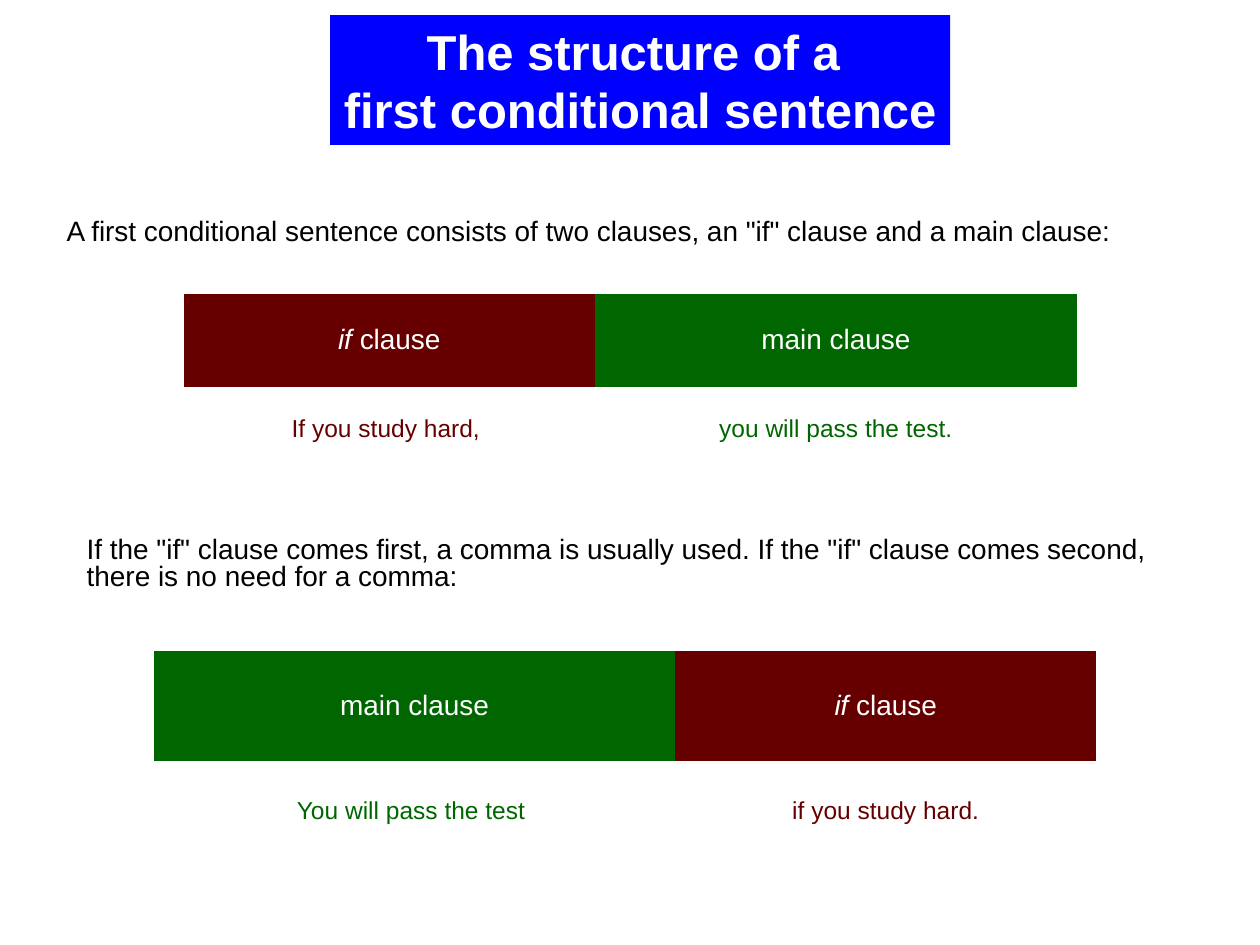
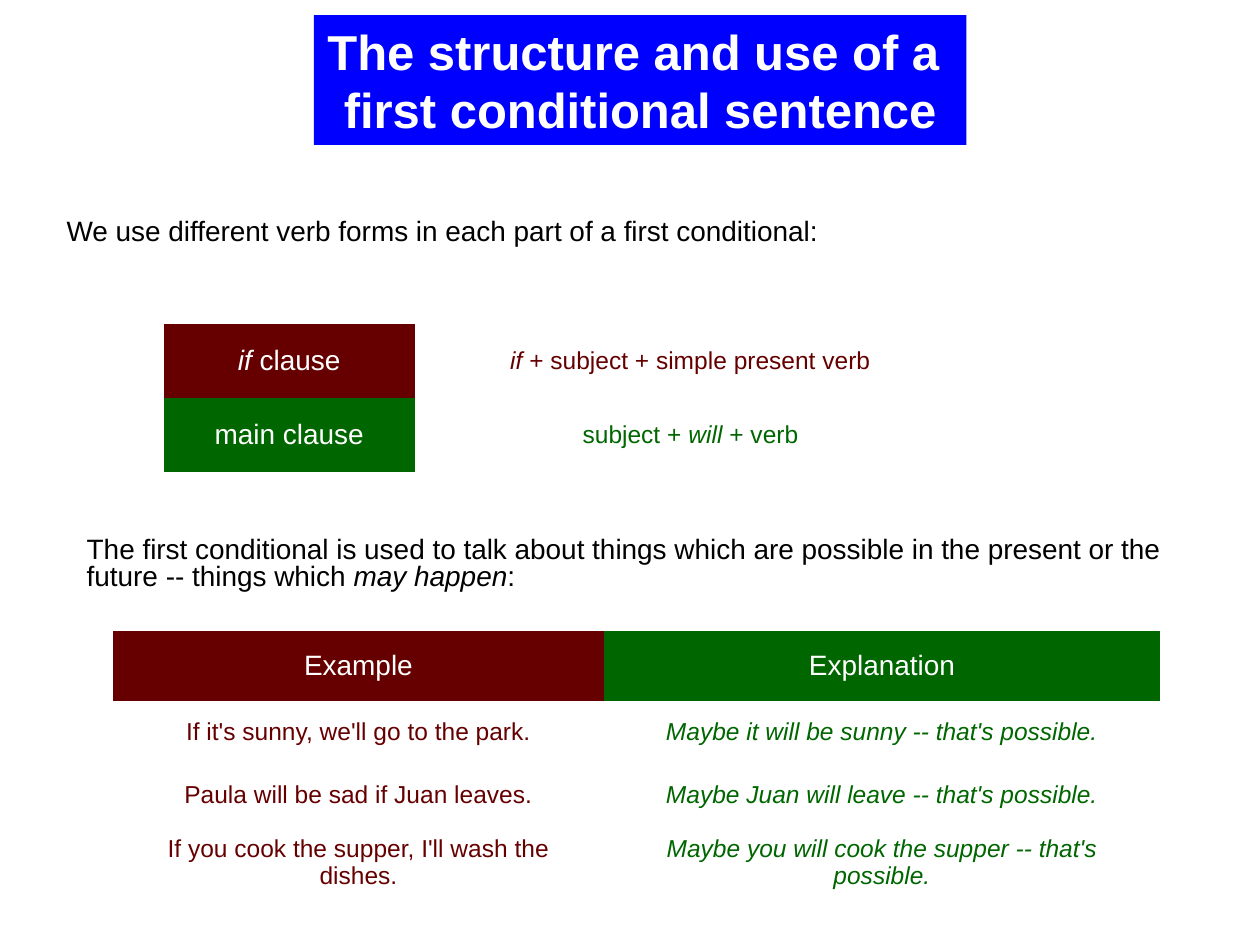
from dataclasses import dataclass

from pptx import Presentation
from pptx.dml.color import RGBColor
from pptx.enum.shapes import MSO_SHAPE
from pptx.enum.text import MSO_ANCHOR, PP_ALIGN
from pptx.util import Inches, Pt

RECTANGLE = MSO_SHAPE.RECTANGLE
MIDDLE = MSO_ANCHOR.MIDDLE
LEFT = PP_ALIGN.LEFT
CENTER = PP_ALIGN.CENTER
BLANK_LAYOUT = 6
NO_GRID_STYLE = "{2D5ABB26-0587-4C30-8999-92F81FD0307C}"


@dataclass(frozen=True)
class Theme:
    font: str = "Arial"
    blue: RGBColor = RGBColor(0x00, 0x00, 0xFF)
    maroon: RGBColor = RGBColor(0x66, 0x00, 0x00)
    green: RGBColor = RGBColor(0x00, 0x66, 0x00)
    white: RGBColor = RGBColor(0xFF, 0xFF, 0xFF)
    black: RGBColor = RGBColor(0x00, 0x00, 0x00)
    title_size: int = 28
    text_size: int = 16
    example_size: int = 14


THEME = Theme()


def write(tf, text, size, color, bold=False, align=LEFT, spacing=None, before=None):
    """Write text into a frame; *stars* mark italics and newlines break lines."""
    p = tf.paragraphs[0]
    p.alignment = align
    if spacing is not None:
        p.line_spacing = spacing
    if before is not None:
        p.space_before = Pt(before)
    for i, line in enumerate(text.split("\n")):
        if i:
            p.add_line_break()
        for j, part in enumerate(line.split("*")):
            if part:
                r = p.add_run()
                r.text = part
                r.font.name = THEME.font
                r.font.size = Pt(size)
                r.font.bold = bold
                r.font.italic = j % 2 == 1
                r.font.color.rgb = color


def add_title(s, text, left, width):
    sp = s.shapes.add_shape(RECTANGLE, Inches(left), Inches(0.12), Inches(width), Inches(1.03))
    sp.shadow.inherit = False
    sp.fill.solid()
    sp.fill.fore_color.rgb = THEME.blue
    sp.line.fill.background()
    tf = sp.text_frame
    tf.word_wrap = False
    tf.vertical_anchor = MIDDLE
    write(tf, text, THEME.title_size, THEME.white, bold=True, align=CENTER)


def add_statement(s, text, left, top):
    tf = s.shapes.add_textbox(Inches(left), Inches(top), Inches(9.14), Inches(0.39)).text_frame
    tf.word_wrap = True
    write(tf, text, THEME.text_size, THEME.black, spacing=0.8, before=0.2 * THEME.text_size)


def heading(text, tone):
    return text, tone, THEME.white, THEME.text_size


def example(text, tone):
    return text, THEME.white, tone, THEME.example_size


def add_clause_table(s, left, top, widths, heights, rows):
    frame = s.shapes.add_table(
        len(heights), len(widths), Inches(left), Inches(top),
        Inches(sum(widths)), Inches(sum(heights)))
    table = frame.table
    table.first_row = False
    table.horz_banding = False
    for style in frame.element.xpath(".//a:tableStyleId"):
        style.text = NO_GRID_STYLE
    for column, width in zip(table.columns, widths):
        column.width = Inches(width)
    for row, height, contents in zip(table.rows, heights, rows):
        row.height = Inches(height)
        for cell, (text, fill, color, size) in zip(row.cells, contents):
            cell.fill.solid()
            cell.fill.fore_color.rgb = fill
            cell.vertical_anchor = MIDDLE
            write(cell.text_frame, text, size, color, align=CENTER)


def add_lesson_slide(prs, title, title_left, title_width, first, second):
    s = prs.slides.add_slide(prs.slide_layouts[BLANK_LAYOUT])
    add_title(s, title, title_left, title_width)
    add_statement(s, first, 0.43, 1.7)
    add_statement(s, second, 0.59, 4.22)
    return s


def build_structure_slide(prs):
    s = add_lesson_slide(
        prs, "The structure of a \nfirst conditional sentence", 2.62, 4.92,
        'A first conditional sentence consists of two clauses, an "if" clause and a main clause:',
        'If the "if" clause comes first, a comma is usually used. '
        'If the "if" clause comes second, there is no need for a comma:')
    if_clause = heading("*if* clause", THEME.maroon)
    main_clause = heading("main clause", THEME.green)
    add_clause_table(s, 1.46, 2.33, [3.26, 3.83], [0.74, 0.67], [
        [if_clause, main_clause],
        [example("If you study hard, ", THEME.maroon),
         example("you will pass the test.", THEME.green)],
    ])
    add_clause_table(s, 1.22, 5.17, [4.14, 3.34], [0.87, 0.79], [
        [main_clause, if_clause],
        [example("You will pass the test ", THEME.green),
         example("if you study hard.", THEME.maroon)],
    ])


def build_use_slide(prs):
    s = add_lesson_slide(
        prs, "The structure and use of a \nfirst conditional sentence", 2.49, 5.18,
        "We use different verb forms in each part of a first conditional:",
        "The first conditional is used to talk about things which are possible "
        "in the present or the future -- things which *may happen*:")
    add_clause_table(s, 1.3, 2.57, [1.99, 4.38], [0.59] * 2, [
        [heading("*if* clause", THEME.maroon),
         example("*if* + subject + simple present verb", THEME.maroon)],
        [heading("main clause", THEME.green),
         example("subject + *will* + verb", THEME.green)],
    ])
    uses = [
        ("If it's sunny, we'll go to the park.", "Maybe it will be sunny -- that's possible."),
        ("Paula will be sad if Juan leaves.", "Maybe Juan will leave -- that's possible."),
        ("If you cook the supper, I'll wash the dishes.",
         "Maybe you will cook the supper -- that's possible."),
    ]
    rows = [[heading("Example", THEME.maroon), heading("Explanation", THEME.green)]]
    rows += [[example(sentence, THEME.maroon), example(f"*{meaning}*", THEME.green)]
             for sentence, meaning in uses]
    add_clause_table(s, 0.9, 5.01, [3.89, 4.42], [0.55] + [0.5] * len(uses), rows)


def main():
    prs = Presentation()
    prs.slide_width = Inches(10)
    prs.slide_height = Inches(7.5)
    build_structure_slide(prs)
    build_use_slide(prs)
    prs.save("out.pptx")


if __name__ == "__main__":
    main()
